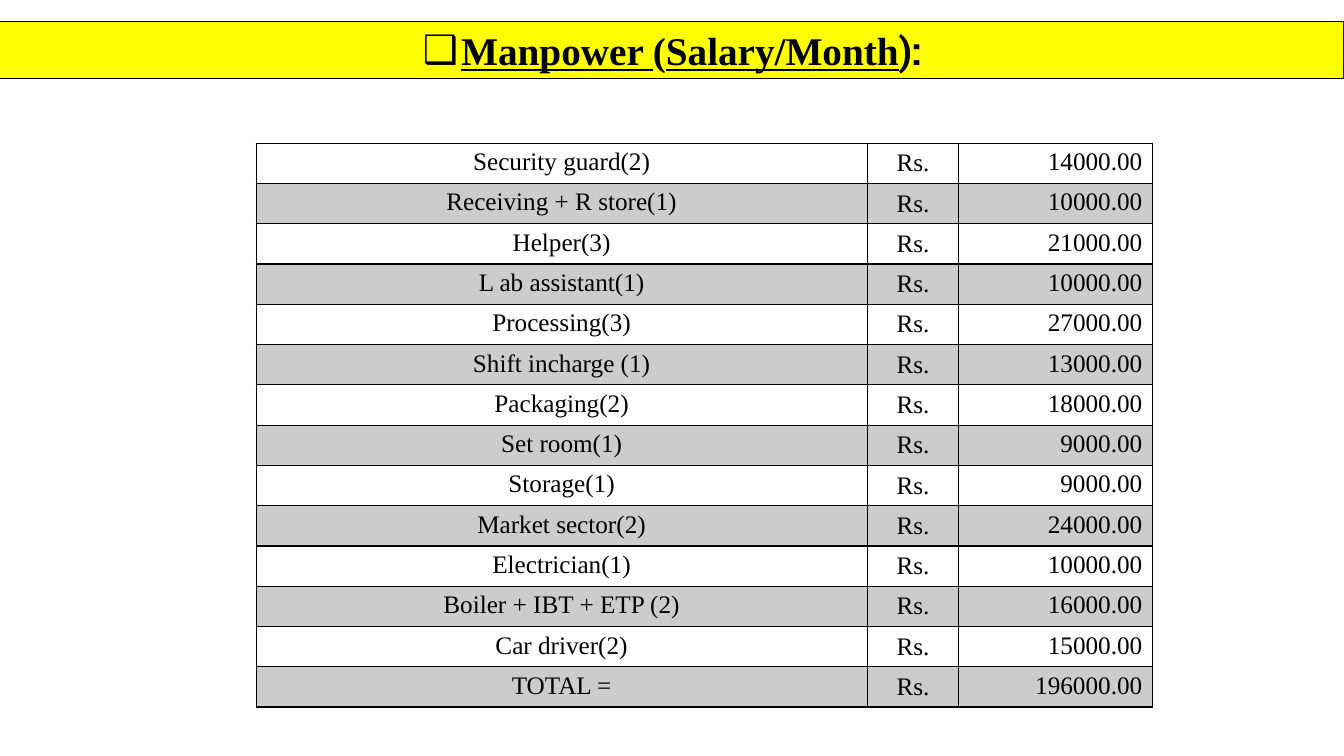
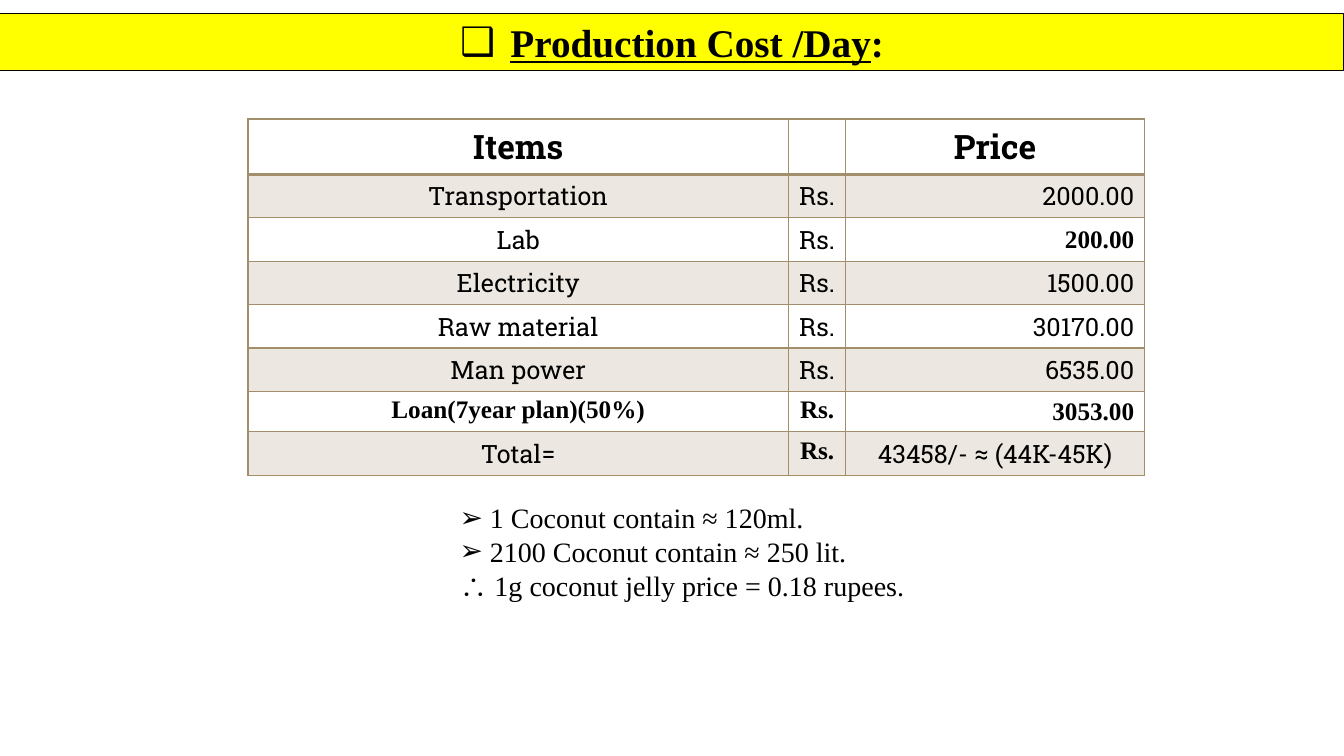
from dataclasses import dataclass

from lxml.etree import SubElement
from pptx import Presentation
from pptx.dml.color import RGBColor
from pptx.enum.shapes import MSO_SHAPE
from pptx.enum.text import MSO_ANCHOR, PP_ALIGN
from pptx.oxml.ns import qn
from pptx.util import Inches, Pt

LEFT, CENTER, RIGHT = PP_ALIGN.LEFT, PP_ALIGN.CENTER, PP_ALIGN.RIGHT
TOP, MIDDLE = MSO_ANCHOR.TOP, MSO_ANCHOR.MIDDLE


@dataclass(frozen=True)
class Theme:
    black: str = "000000"
    white: str = "FFFFFF"
    yellow: str = "FFFF00"
    tan: str = "A28E6A"
    serif: str = "Times New Roman"
    slab: str = "Roboto Slab"
    title: int = 28
    header: int = 24
    note: int = 20
    body: int = 18
    band_alpha: int = 20


@dataclass(frozen=True)
class Box:
    left: float
    top: float
    width: float
    height: float

    def emu(self):
        return [Inches(side) for side in (self.left, self.top, self.width, self.height)]


THEME = Theme()
PAGE = Box(0, 0, 13.33, 7.5)
BAND_HEIGHT = 0.57

SALARIES = [
    ("Security guard(2)", "14000.00"),
    ("Receiving + R store(1)", "10000.00"),
    ("Helper(3)", "21000.00"),
    ("L ab assistant(1)", "10000.00"),
    ("Processing(3)", "27000.00"),
    ("Shift incharge (1)", "13000.00"),
    ("Packaging(2)", "18000.00"),
    ("Set room(1)", "9000.00"),
    ("Storage(1)", "9000.00"),
    ("Market sector(2)", "24000.00"),
    ("Electrician(1)", "10000.00"),
    ("Boiler + IBT + ETP (2)", "16000.00"),
    ("Car driver(2)", "15000.00"),
    ("TOTAL =", "196000.00"),
]
COSTS = [
    ("Transportation", "2000.00"),
    ("Lab", "200.00"),
    ("Electricity", "1500.00"),
    ("Raw material", "30170.00"),
    ("Man power", "6535.00"),
    ("Loan(7year plan)(50%)", "3053.00"),
    ("Total=", "43458/- ≈ (44K-45K)"),
]
# Cells of the cost table set in bold serif, as (row, column)
BOLD_COSTS = {(2, 2), (6, 0), (6, 1), (6, 2), (7, 1)}


def add_run(para, text, size, font, bold=False, underline=False):
    span = para.add_run()
    span.text = text
    span.font.size = Pt(size)
    span.font.name = font
    span.font.bold = bold
    span.font.underline = underline
    span.font.color.rgb = RGBColor.from_string(THEME.black)


def set_bullet(para, mark, indent):
    properties = para._p.get_or_add_pPr()
    properties.set("marL", str(Inches(indent)))
    properties.set("indent", str(-Inches(indent)))
    SubElement(properties, qn("a:buFont"), typeface="Arial")
    SubElement(properties, qn("a:buChar"), char=mark)


def set_borders(cell, color, widths):
    """Draw the left, right, top and bottom edges with the given widths."""
    properties = cell._tc.get_or_add_tcPr()
    for side, width in zip("LRTB", widths):
        edge = SubElement(properties, qn(f"a:ln{side}"), w=str(Pt(width)))
        SubElement(SubElement(edge, qn("a:solidFill")), qn("a:srgbClr"), val=color)


def set_fill(cell, color, alpha=100):
    cell.fill.solid()
    cell.fill.fore_color.rgb = RGBColor.from_string(color)
    if alpha < 100:
        tint = cell._tc.tcPr.find(".//" + qn("a:solidFill") + "/" + qn("a:srgbClr"))
        for choice in cell._tc.tcPr.findall(qn("a:solidFill")):
            tint = choice.find(qn("a:srgbClr"))
        SubElement(tint, qn("a:alpha"), val=str(alpha * 1000))


def add_title_band(page, box, indent, runs):
    """Yellow band with a checkbox bullet; runs are (text, underline, font)."""
    band = page.shapes.add_shape(MSO_SHAPE.RECTANGLE, *box.emu())
    band.shadow.inherit = False
    band.fill.solid()
    band.fill.fore_color.rgb = RGBColor.from_string(THEME.yellow)
    band.line.color.rgb = RGBColor.from_string(THEME.black)
    band.line.width = Pt(0.75)
    frame = band.text_frame
    frame.word_wrap = True
    frame.vertical_anchor = MIDDLE
    para = frame.paragraphs[0]
    para.alignment = CENTER
    set_bullet(para, "❑", indent)
    for text, underline, font in runs:
        add_run(para, text, THEME.title, font, True, underline)


def add_grid(page, box, columns, rows):
    """Plain table whose columns and rows share out the box by weight."""
    frame = page.shapes.add_table(len(rows), len(columns), *box.emu())
    table = frame.table
    table.first_row = table.horz_banding = False
    for column, weight in zip(table.columns, columns):
        column.width = Inches(box.width * weight / sum(columns))
    for row, weight in zip(table.rows, rows):
        row.height = Inches(box.height * weight / sum(rows))
    return table


def fill_cell(cell, text, size, font, bold, align, anchor):
    cell.vertical_anchor = anchor
    para = cell.text_frame.paragraphs[0]
    para.alignment = align
    if text:
        add_run(para, text, size, font, bold)


def paint_cell(cell, color, banded, widths=(1, 1, 1, 1)):
    set_borders(cell, color, widths)
    if banded:
        set_fill(cell, color, THEME.band_alpha)
    else:
        set_fill(cell, THEME.white)


def add_salary_table(page, box):
    table = add_grid(page, box, (6.06, 0.91, 1.92), [1] * len(SALARIES))
    layout = ((CENTER, TOP), (CENTER, MIDDLE), (RIGHT, TOP))
    for row, (job, amount) in enumerate(SALARIES):
        for column, text in enumerate((job, "Rs.", amount)):
            cell = table.cell(row, column)
            paint_cell(cell, THEME.black, row % 2 == 1)
            fill_cell(cell, text, THEME.body, THEME.serif, False, *layout[column])


def add_cost_table(page, box):
    heights = [0.55] + [0.43] * 5 + [0.4, 0.43]
    table = add_grid(page, box, (5.36, 0.57, 2.96), heights)
    lines = [("Items", "", "Price")] + [(item, "Rs.", price) for item, price in COSTS]
    last = len(lines) - 1
    for row, texts in enumerate(lines):
        header = row == 0
        size = THEME.header if header else THEME.body
        widths = (1, 1, 2 if row == 1 else 1, 2 if header else 1)
        for column, text in enumerate(texts):
            cell = table.cell(row, column)
            strong = (row, column) in BOLD_COSTS
            price = column == 2 and 0 < row < last
            paint_cell(cell, THEME.tan, row % 2 == 1, widths)
            fill_cell(cell, text, size, THEME.serif if strong else THEME.slab,
                      strong or header, RIGHT if price else CENTER,
                      MIDDLE if price else TOP)


def add_notes_list(page, box, notes):
    """Notes as (bullet mark or None, text)."""
    frame = page.shapes.add_textbox(*box.emu()).text_frame
    frame.word_wrap = True
    for index, (mark, text) in enumerate(notes):
        para = frame.add_paragraph() if index else frame.paragraphs[0]
        para.alignment = LEFT
        if mark:
            set_bullet(para, mark, 0.3)
        add_run(para, text, THEME.note, THEME.serif)


def build_manpower(page):
    add_salary_table(page, Box(2.54, 1.42, 8.89, 5.6))
    add_title_band(page, Box(0, 0.21, PAGE.width, BAND_HEIGHT), 0.38, [
        ("Manpower ", True, THEME.serif),
        ("(", False, THEME.serif),
        ("Salary/Month", True, THEME.serif),
        ("):", False, THEME.slab),
    ])


def build_production_cost(page):
    add_cost_table(page, Box(2.46, 1.18, 8.89, 3.53))
    add_title_band(page, Box(0, 0.13, PAGE.width, BAND_HEIGHT), 0.5, [
        ("Production Cost /Day", True, THEME.serif),
        (":", False, THEME.serif),
    ])
    add_notes_list(page, Box(4.46, 4.92, 4.75, 1.11), [
        ("➢", "1 Coconut contain ≈ 120ml."),
        ("➢", "2100 Coconut contain ≈ 250 lit."),
        (None, "∴ 1g coconut jelly price = 0.18 rupees."),
    ])


def main():
    deck = Presentation()
    deck.slide_width, deck.slide_height = Inches(PAGE.width), Inches(PAGE.height)
    for build in (build_manpower, build_production_cost):
        build(deck.slides.add_slide(deck.slide_layouts[6]))
    deck.save("out.pptx")


if __name__ == "__main__":
    main()
